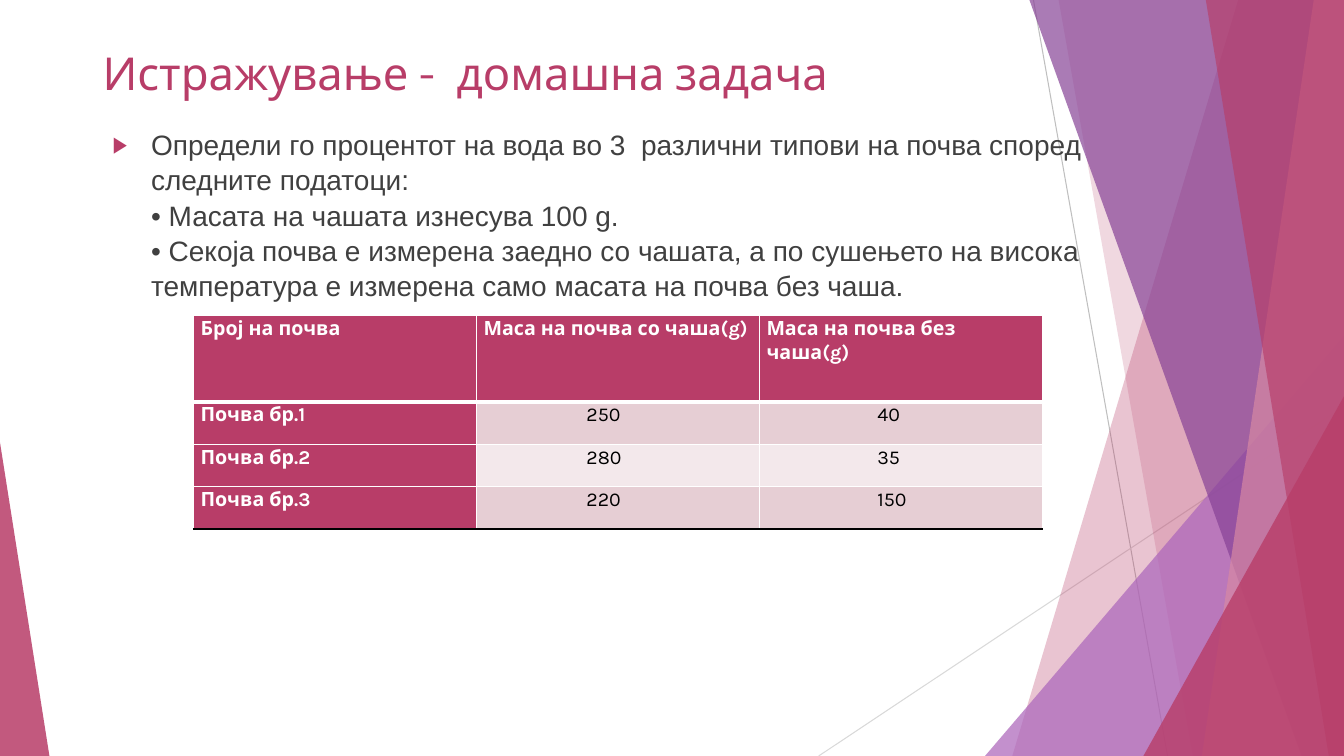
from dataclasses import dataclass

from lxml.etree import SubElement
from pptx import Presentation
from pptx.dml.color import RGBColor
from pptx.enum.shapes import MSO_CONNECTOR, MSO_SHAPE
from pptx.oxml import parse_xml
from pptx.oxml.ns import nsdecls, qn
from pptx.util import Inches, Pt

WIDTH, HEIGHT = 13.33, 7.5
COLORS = {
    "rose": "B83D68", "pink": "D788A3", "purple": "874396", "lilac": "AC66BB",
    "gray": "BFBFBF", "light gray": "D9D9D9", "text": "404040",
    "band dark": "E6CED4", "band light": "F3E8EB",
    "white": "FFFFFF", "black": "000000",
}


@dataclass
class Ray:
    start: tuple[float, float]
    end: tuple[float, float]
    color: str


@dataclass
class Panel:
    """Facet from a slanted left edge to the right side of the slide."""
    top_x: float
    bottom_x: float
    color: str
    opacity: int


@dataclass
class Corner:
    """Triangle on the slide's bottom edge, its peak at 0 (left) or 1 (right)."""
    left: float
    top: float
    width: float
    peak: int
    color: str
    opacity: int


RAYS = [
    Ray((10.25, 0), (11.58, HEIGHT), "gray"),
    Ray((WIDTH, 4.03), (8.12, HEIGHT), "light gray"),
]
FACETS = [
    Panel(12.28, 10.04, "rose", 30),
    Panel(10.5, 11.83, "rose", 20),
    Corner(9.77, 3.33, 3.56, 1, "lilac", 72),
    Panel(10.21, 12.91, "purple", 70),
    Panel(13.03, 11.92, "pink", 70),
    Panel(11.96, 13.18, "rose", 65),
    Corner(11.34, 3.93, 1.99, 1, "rose", 80),
    Corner(0, 4.39, 0.49, 0, "rose", 85),
]

TITLE = "Истражување -  домашна задача"
TASK = "\n".join([
    "Определи го процентот на вода во 3  различни типови на почва според следните податоци:",
    "• Масата на чашата изнесува 100 g.",
    "• Секоја почва е измерена заедно со чашата, а по сушењето на висока",
    "температура е измерена само масата на почва без чаша.",
])
SOIL_ROWS = [
    ("Број на почва", "Маса на почва со чаша(g)", "Маса на почва без чаша(g)"),
    ("Почва бр.1", "250", "40"),
    ("Почва бр.2", "280", "35"),
    ("Почва бр.3", "220", "150"),
]
VALUE_INDENTS = (0, 1.02, 1.1)
ROW_HEIGHTS = (0.86, 0.42, 0.42, 0.42)


def rgb(name: str) -> RGBColor:
    return RGBColor.from_string(COLORS[name])


def draw_ray(slide, ray: Ray) -> None:
    line = slide.shapes.add_connector(
        MSO_CONNECTOR.STRAIGHT, *map(Inches, ray.start + ray.end))
    line.line.color.rgb = rgb(ray.color)
    line.line.width = Pt(0.75)
    SubElement(line._element.spPr, qn("a:effectLst"))


def draw_facet(slide, facet: Panel | Corner) -> None:
    if isinstance(facet, Panel):
        outline = slide.shapes.build_freeform(Inches(facet.top_x), 0)
        outline.add_line_segments([
            (Inches(WIDTH), 0), (Inches(WIDTH), Inches(HEIGHT)),
            (Inches(facet.bottom_x), Inches(HEIGHT))], close=True)
        shape = outline.convert_to_shape()
    else:
        shape = slide.shapes.add_shape(
            MSO_SHAPE.ISOSCELES_TRIANGLE, Inches(facet.left), Inches(facet.top),
            Inches(facet.width), Inches(HEIGHT - facet.top))
        shape.adjustments[0] = facet.peak
    shape.shadow.inherit = False
    shape.line.fill.background()
    shape.fill.solid()
    shape.fill.fore_color.rgb = rgb(facet.color)
    color = shape._element.spPr.find(qn("a:solidFill"))[0]
    SubElement(color, qn("a:alpha"), val=str(facet.opacity * 1000))


def style(paragraph, size: float, font: str, color: str, bold: bool = False) -> None:
    paragraph.font.size = Pt(size)
    paragraph.font.name = font
    paragraph.font.bold = bold
    paragraph.font.color.rgb = rgb(color)


def add_text(slide, text: str, left: float, top: float, width: float, height: float):
    """Add a wrapping text box and return its paragraph."""
    frame = slide.shapes.add_textbox(*map(Inches, (left, top, width, height))).text_frame
    frame.word_wrap = True
    frame.paragraphs[0].text = text
    return frame.paragraphs[0]


def add_bullet(paragraph) -> None:
    properties = paragraph._p.get_or_add_pPr()
    properties.set("marL", str(Inches(0.38)))
    properties.set("indent", str(-Inches(0.38)))
    defaults = properties.find(qn("a:defRPr"))
    for xml in (
        f'<a:buClr {nsdecls("a")}><a:srgbClr val="{COLORS["rose"]}"/></a:buClr>',
        f'<a:buSzPct {nsdecls("a")} val="80000"/>',
        f'<a:buFont {nsdecls("a")} typeface="Arial"/>',
        f'<a:buChar {nsdecls("a")} char="▶"/>',
    ):
        defaults.addprevious(parse_xml(xml))


def set_borders(cell, row: int) -> None:
    last = len(SOIL_ROWS) - 1
    sides = {
        "L": ("white", 1), "R": ("white", 1),
        "T": ("white", 3 if row == 1 else 1),
        "B": ("black" if row == last else "white", 3 if row == 0 else 1),
    }
    properties = cell._tc.get_or_add_tcPr()
    for position, (side, (color, width)) in enumerate(sides.items()):
        properties.insert(position, parse_xml(
            f'<a:ln{side} {nsdecls("a")} w="{Pt(width)}"><a:solidFill>'
            f'<a:srgbClr val="{COLORS[color]}"/></a:solidFill></a:ln{side}>'))


def fill_cell(cell, text: str, row: int, column: int) -> None:
    heading = row == 0 or column == 0
    cell.margin_left = cell.margin_right = Inches(0.07)
    cell.margin_top = cell.margin_bottom = 0
    cell.fill.solid()
    cell.fill.fore_color.rgb = rgb(
        "rose" if heading else "band dark" if row % 2 else "band light")
    set_borders(cell, row)
    paragraph = cell.text_frame.paragraphs[0]
    paragraph.text = text
    paragraph.line_spacing = 1.07
    style(paragraph, 14, "Karla", "white" if heading else "black", heading)
    if not heading:
        paragraph._p.get_or_add_pPr().set("marL", str(Inches(VALUE_INDENTS[column])))


def add_soil_table(slide) -> None:
    table = slide.shapes.add_table(
        len(SOIL_ROWS), len(SOIL_ROWS[0]), Inches(1.92), Inches(3.13),
        Inches(8.42), Inches(sum(ROW_HEIGHTS))).table
    table.horz_banding = False
    for row, (texts, height) in enumerate(zip(SOIL_ROWS, ROW_HEIGHTS)):
        table.rows[row].height = Inches(height)
        for column, text in enumerate(texts):
            fill_cell(table.cell(row, column), text, row, column)


def main() -> None:
    presentation = Presentation()
    presentation.slide_width = Inches(WIDTH)
    presentation.slide_height = Inches(HEIGHT)
    slide = presentation.slides.add_slide(presentation.slide_layouts[6])
    for ray in RAYS:
        draw_ray(slide, ray)
    for facet in FACETS:
        draw_facet(slide, facet)

    title = add_text(slide, TITLE, 0.92, 0.4, 11.5, 0.49)
    style(title, 32.4, "Karla", "rose")
    task = add_text(slide, TASK, 1.02, 1.2, 10.84, 5.52)
    task.space_before = Pt(10)
    task.line_spacing = 1.05
    style(task, 20, "Arial", "text")
    add_bullet(task)
    add_soil_table(slide)
    presentation.save("out.pptx")


if __name__ == "__main__":
    main()
